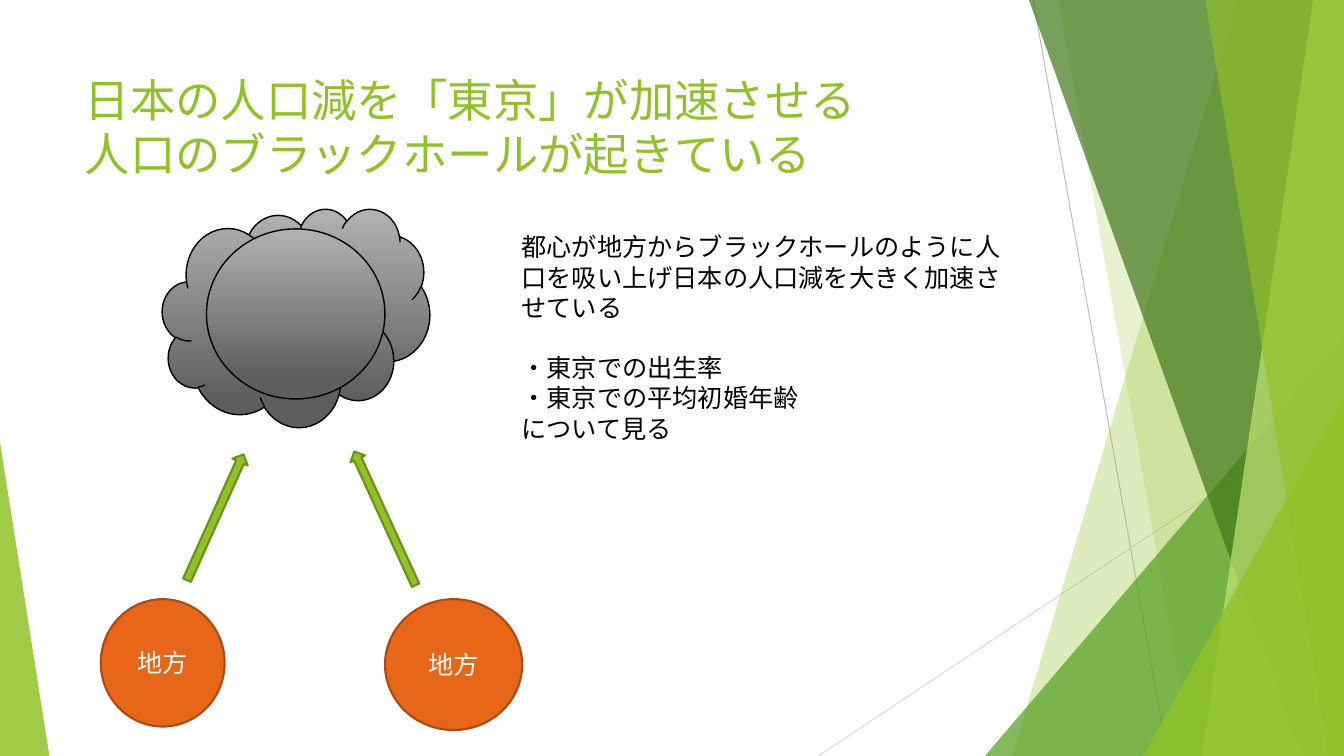
from collections import namedtuple

from lxml import etree
from pptx import Presentation
from pptx import util as u
from pptx.dml.color import RGBColor
from pptx.enum import shapes, text
from pptx.oxml.ns import qn

Box = namedtuple("Box", "left top width height")
FONT = "Roboto"
COLORS = {
    "lime": "90C226", "green": "54A021", "forest": "3F7819", "pale": "C0E474",
    "arrow_edge": "6B901C", "orange": "E76618", "orange_edge": "AB4B12",
    "gray": "B2B2B2", "dark_gray": "5E5E5E", "rule": "BFBFBF",
    "light_rule": "D9D9D9", "black": "000000", "white": "FFFFFF",
}
KIND = shapes.MSO_SHAPE


def color(name):
    """Return the palette colour of that name."""
    return RGBColor.from_string(COLORS[name])


def paint(shape, fill, edge=None, width=1.5, alpha=None):
    """Give a shape a plain fill and an edge, or none."""
    shape.shadow.inherit = False
    shape.fill.solid()
    shape.fill.fore_color.rgb = color(fill)
    if alpha is not None:
        tone = shape.fill._xPr.find(qn("a:solidFill"))[0]
        etree.SubElement(tone, qn("a:alpha"), val=str(alpha * 1000))
    outline(shape, edge, width)


def outline(shape, edge, width):
    """Draw the edge of a shape, or remove it."""
    if edge is None:
        shape.line.fill.background()
    else:
        shape.line.color.rgb = color(edge)
        shape.line.width = u.Pt(width)


def add_preset(slide, kind, box):
    """Add a preset shape that fills the box."""
    return slide.shapes.add_shape(kind, *map(u.Pt, box))


def style(para, size, tone):
    """Set font, size and colour of a paragraph."""
    para.font.name = FONT
    para.font.size = u.Pt(size)
    para.font.color.rgb = color(tone)
    latin = para.font._rPr.find(qn("a:latin"))
    latin.addnext(latin.makeelement(qn("a:ea"), {"typeface": FONT}))


def add_text(slide, box, lines, size, tone):
    """Add a wrapping text box with one paragraph per line."""
    frame = slide.shapes.add_textbox(*map(u.Pt, box)).text_frame
    frame.word_wrap = True
    frame.text = "\n".join(lines)
    for para in frame.paragraphs:
        style(para, size, tone)
    return frame


def draw_facets(slide, box):
    """Draw the translucent facets and thin rules of the background."""
    right, bottom = box.left + box.width, box.top + box.height
    rules = [
        ((738, box.top), (834, bottom), "rule"),
        ((right, 290), (584.5, bottom), "light_rule"),
    ]
    for start, end, tone in rules:
        rule = slide.shapes.add_connector(
            shapes.MSO_CONNECTOR.STRAIGHT, *map(u.Pt, start + end))
        outline(rule, tone, 0.75)
        etree.SubElement(rule._element.spPr, qn("a:effectLst"))

    def band(upper, lower, tone, alpha):
        """Draw a band from a slanted left edge to the right side."""
        builder = slide.shapes.build_freeform(
            u.Pt(upper), u.Pt(box.top))
        corners = [(right, box.top), (right, bottom), (lower, bottom)]
        builder.add_line_segments([(u.Pt(x), u.Pt(y)) for x, y in corners])
        paint(builder.convert_to_shape(), tone, alpha=alpha)

    def wedge(left, width, height, peak, tone, alpha):
        """Draw a right triangle that stands on the bottom."""
        place = Box(left, bottom - height, width, height)
        shape = add_preset(slide, KIND.ISOSCELES_TRIANGLE, place)
        shape.adjustments[0] = peak
        paint(shape, tone, alpha=alpha)

    band(884, 723, "lime", 30)
    band(756, 852, "lime", 20)
    wedge(right - 256.5, 256.5, 300, 1, "green", 72)
    band(735, 929.5, "forest", 70)
    band(938, 858.5, "pale", 70)
    band(861, 949, "lime", 65)
    wedge(right - 143.5, 143.5, 257, 1, "lime", 80)
    wedge(box.left, 35.3, 224, 0, "lime", 85)


def draw_black_hole(slide, box):
    """Draw the gray cloud with a ball in front of it."""
    ball = Box(box.left + 31.5, box.top + 14.5, 127.5, 121.5)
    for kind, place in ((KIND.CLOUD, box), (KIND.OVAL, ball)):
        shape = add_preset(slide, kind, place)
        shape.shadow.inherit = False
        shape.fill.gradient()
        shape.fill.gradient_angle = 270
        stops = zip(shape.fill.gradient_stops, ("gray", "dark_gray"), (0, 0.88))
        for stop, tone, position in stops:
            stop.color.rgb = color(tone)
            stop.position = position
        outline(shape, "black", 1)


def draw_regions(slide, box):
    """Draw the two regions and the arrows that rise from them."""
    bottom = box.top + box.height
    for left, width, height in ((0, 88.5, 91), (203, 98, 93.5)):
        place = Box(box.left + left, bottom - 93.5, width, height)
        region = add_preset(slide, KIND.OVAL, place)
        paint(region, "orange", "orange_edge")
        frame = region.text_frame
        frame.vertical_anchor = text.MSO_ANCHOR.MIDDLE
        frame.text = "地方"
        para = frame.paragraphs[0]
        para.alignment = text.PP_ALIGN.CENTER
        style(para, 18, "white")
    arrows = ((32.5, 41.5, 98.5, 12, 294.2), (150.5, 42.5, 105, 11.5, 245.4))
    for left, top, width, height, angle in arrows:
        place = Box(box.left + left, box.top + top, width, height)
        arrow = add_preset(slide, KIND.RIGHT_ARROW, place)
        arrow.rotation = angle
        paint(arrow, "lime", "arrow_edge")


def draw_title(slide, box):
    """Write the two-line title."""
    title = "日本の人口減を「東京」が加速させる\v人口のブラックホールが起きている"
    add_text(slide, box, [title], 32.4, "lime")


def draw_comment(slide, box):
    """Write the explanation beside the diagram."""
    lines = [
        "都心が地方からブラックホールのように人口を吸い上げ日本の人口減を大きく加速させている",
        "・東京での出生率",
        "・東京での平均初婚年齢",
        "について見る",
    ]
    frame = add_text(slide, box, lines, 18, "black")
    frame.paragraphs[1].space_before = u.Pt(21.5)


def main():
    """Build the deck and save it."""
    deck = Presentation()
    deck.slide_width, deck.slide_height = u.Pt(960), u.Pt(540)
    page = deck.slides.add_slide(deck.slide_layouts[6])
    draw_facets(page, Box(0, 0, 960, 540))
    draw_black_hole(page, Box(116, 149, 191, 156))
    draw_title(page, Box(53.5, 48, 677, 104))
    draw_regions(page, Box(72, 322, 301, 199.5))
    draw_comment(page, Box(365.5, 162, 357, 160))
    deck.save("out.pptx")


if __name__ == "__main__":
    main()
